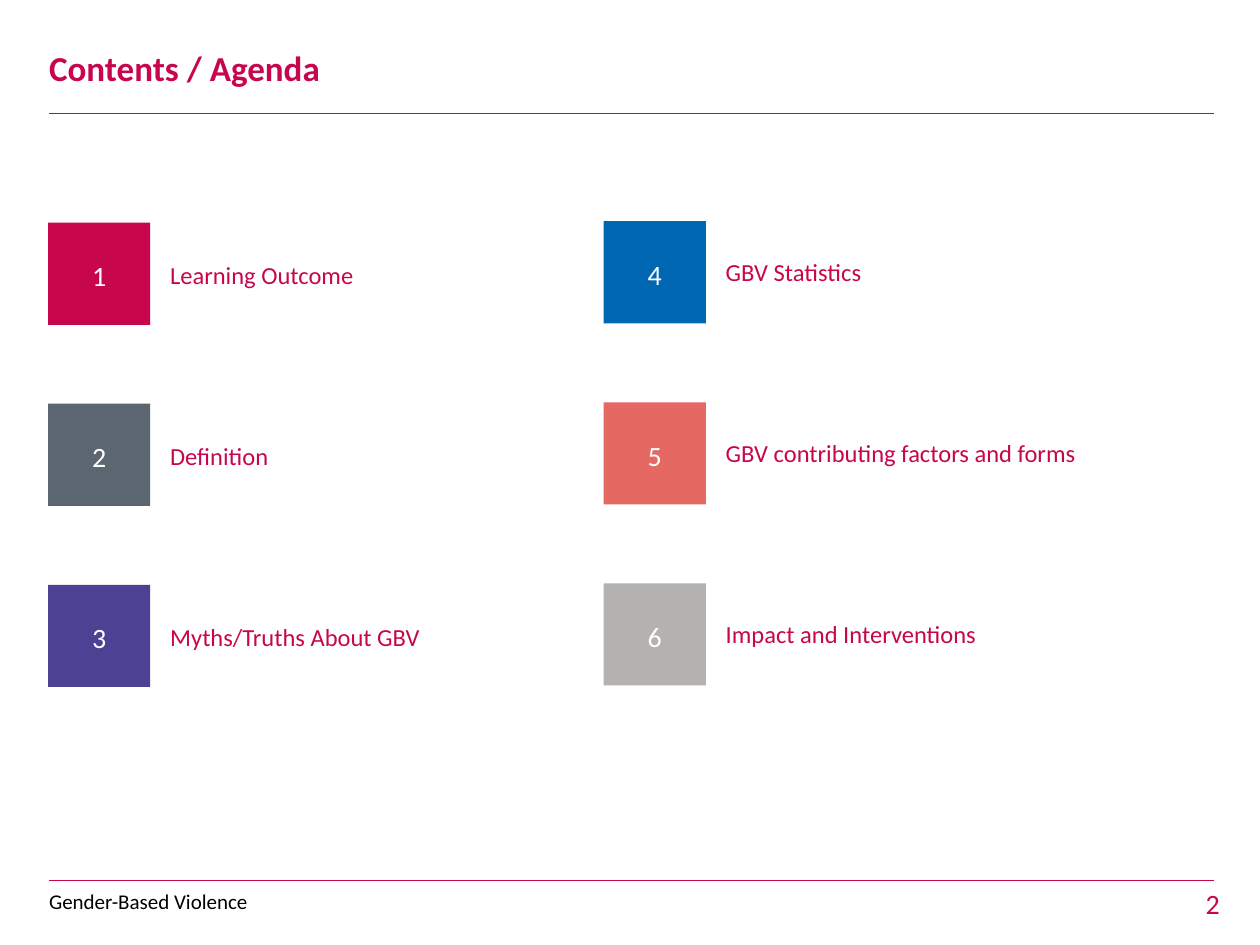
import pptx
import pptx.util
import pptx.dml.color
import pptx.enum.shapes
import pptx.enum.text
import pptx.oxml.ns
from lxml import etree

Cm, Pt = pptx.util.Cm, pptx.util.Pt
RGB = pptx.dml.color.RGBColor
Align = pptx.enum.text.PP_ALIGN
Anchor = pptx.enum.text.MSO_ANCHOR

RED = RGB(0xC7, 0x06, 0x4C)
SLATE = RGB(0x5B, 0x66, 0x70)
VIOLET = RGB(0x4C, 0x41, 0x92)
BLUE = RGB(0x00, 0x68, 0xB2)
CORAL = RGB(0xE6, 0x68, 0x62)
GREY = RGB(0xB3, 0xB2, 0xB1)
WHITE = RGB(0xFF, 0xFF, 0xFF)
BLACK = RGB(0, 0, 0)

TITLE = "Contents / Agenda"
FOOTER = "Gender-Based Violence"
PAGE = "2"
# Each column: left of box, top of first box, top of first label, items
COLUMNS = [
    (0.97, 4.49, 4.45, [("Learning Outcome", RED), ("Definition", SLATE),
                        ("Myths/Truths About GBV", VIOLET)]),
    (12.17, 4.46, 4.39, [("GBV Statistics", BLUE),
                         ("GBV contributing factors and forms", CORAL),
                         ("Impact and Interventions", GREY)]),
]
BOX = 2.06
PITCH = 3.65
RULES = [2.29, 17.75]
LEFT, RIGHT = 0.99, 24.48


def write(shape, text, size, color, align=Align.LEFT, anchor=Anchor.MIDDLE,
          bold=False, lead=None, before=0):
    frame = shape.text_frame
    frame.word_wrap = True
    frame.vertical_anchor = anchor
    para = frame.paragraphs[0]
    para.text = text
    para.alignment = align
    para.line_spacing = lead
    para.space_before = Pt(before)
    font = para.font
    font.name, font.size, font.bold = "Calibri", Pt(size), bold
    font.color.rgb = color


def place(shapes, left, top, width, height):
    return shapes.add_textbox(Cm(left), Cm(top), Cm(width), Cm(height))


def rule(shapes, y):
    line = shapes.add_connector(pptx.enum.shapes.MSO_CONNECTOR.STRAIGHT,
                                Cm(LEFT), Cm(y), Cm(RIGHT), Cm(y))
    line.line.color.rgb = RED
    line.line.width = Pt(1)
    etree.SubElement(line._element.spPr, pptx.oxml.ns.qn("a:effectLst"))


def item(shapes, num, text, color, left, top, label):
    box = shapes.add_shape(pptx.enum.shapes.MSO_SHAPE.RECTANGLE,
                           Cm(left), Cm(top), Cm(BOX), Cm(BOX))
    box.shadow.inherit = False
    box.fill.solid()
    box.fill.fore_color.rgb = color
    box.line.fill.background()
    write(box, str(num), 16, WHITE, Align.CENTER, lead=1.1, before=7.5)
    write(place(shapes, left + 2.21, label, 7.98, 2.11), text, 14, RED,
          lead=1.1, before=7.5)


def main():
    deck = pptx.Presentation()
    deck.slide_width, deck.slide_height = Cm(25.4), Cm(19.05)
    shapes = deck.slides.add_slide(deck.slide_layouts[6]).shapes

    for y in RULES:
        rule(shapes, y)
    write(place(shapes, 0.74, 0.91, 23.7, 1.02), TITLE, 20, RED,
          anchor=Anchor.TOP, bold=True, lead=0.9)

    num = 0
    for left, top, label, items in COLUMNS:
        for row, (text, color) in enumerate(items):
            num += 1
            step = row * PITCH
            item(shapes, num, text, color, left, top + step, label + step)

    write(place(shapes, 0.74, 17.65, 8.59, 1.02), FOOTER, 12, BLACK)
    write(place(shapes, 22.94, 17.75, 1.9, 0.89), PAGE, 16, RED,
          Align.RIGHT, Anchor.TOP)
    deck.save("out.pptx")


if __name__ == "__main__":
    main()
